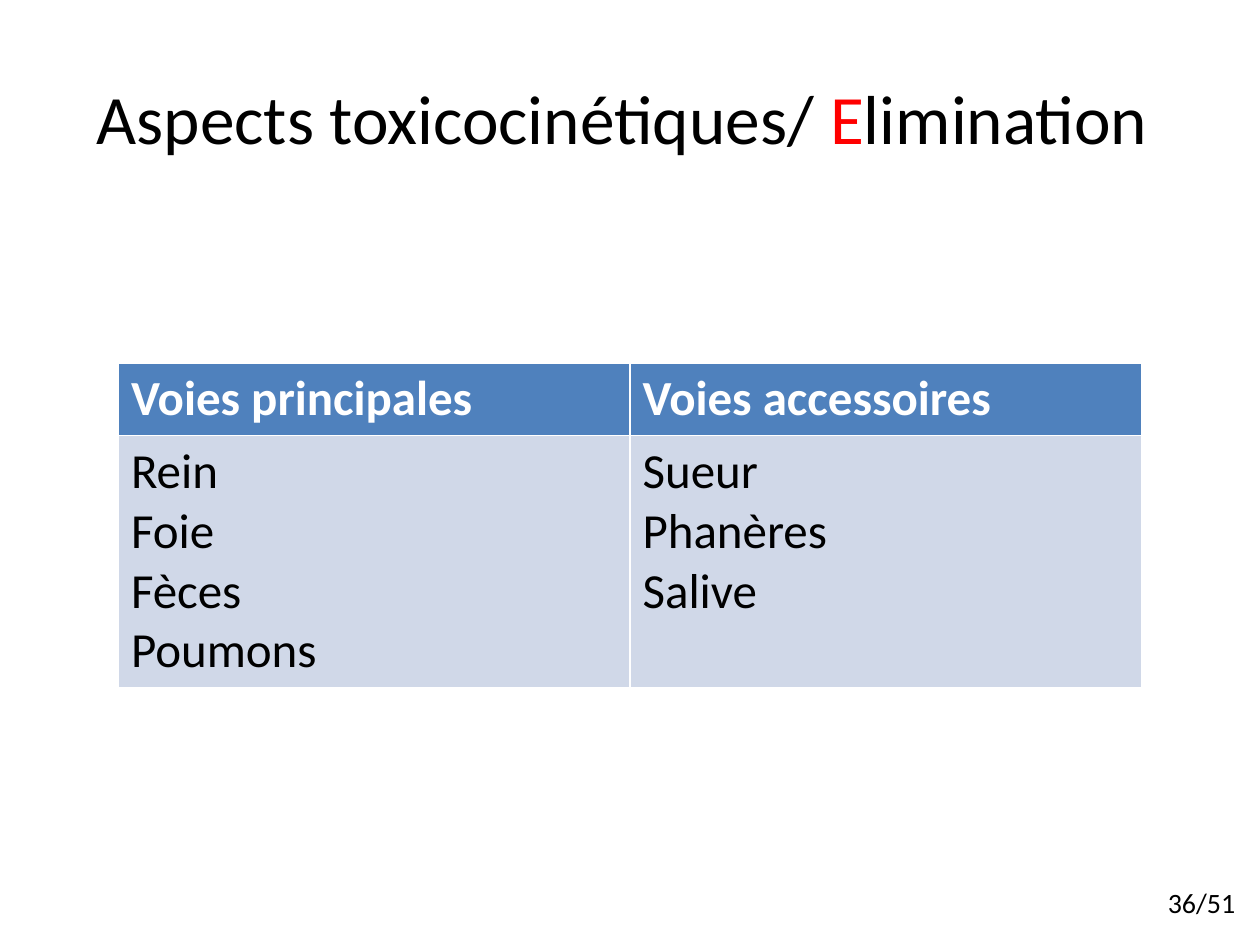
from pptx import Presentation
from pptx import util as u
from pptx.dml import color
from pptx.enum import text

COLORS = {"ink": "000000", "accent": "FF0000", "header": "4F81BD",
          "body": "D0D8E8", "paper": "FFFFFF"}
ROUTES = {
    "Voies principales": ["Rein", "Foie", "Fèces", "Poumons"],
    "Voies accessoires": ["Sueur", "Phanères", "Salive"],
}


class SlideWriter:
    """Holds the style and the current slide; lengths are shares of its size."""

    font = "Calibri"

    def __init__(self, deck):
        self.deck = deck
        self.page = deck.slides.add_slide(deck.slide_layouts[5])

    def area(self, left, top, width, height):
        wide, high = self.deck.slide_width, self.deck.slide_height
        return [u.Emu(round(share * size)) for share, size in
                zip((left, top, width, height), (wide, high, wide, high))]

    def style(self, span, size, ink="ink", bold=False):
        span.font.name = self.font
        span.font.size = u.Pt(size)
        span.font.bold = bold
        span.font.color.rgb = color.RGBColor.from_string(COLORS[ink])

    def title(self, parts, area, size):
        box = self.page.shapes.title
        box.left, box.top, box.width, box.height = self.area(*area)
        box.text_frame.vertical_anchor = text.MSO_ANCHOR.MIDDLE
        para = box.text_frame.paragraphs[0]
        para.alignment = text.PP_ALIGN.CENTER
        for words, ink in parts:
            span = para.add_run()
            span.text = words
            self.style(span, size, ink)

    def cell(self, cell, lines, size, fill, ink, bold):
        cell.fill.solid()
        cell.fill.fore_color.rgb = color.RGBColor.from_string(COLORS[fill])
        cell.text_frame.text = "\n".join(lines)
        for para in cell.text_frame.paragraphs:
            for span in para.runs:
                self.style(span, size, ink, bold)

    def table(self, columns, area, header_share, size):
        frame = self.page.shapes.add_table(2, len(columns), *self.area(*area))
        table = frame.table
        table.rows[0].height = round(frame.height * header_share)
        table.rows[1].height = frame.height - table.rows[0].height
        for index, (heading, lines) in enumerate(columns.items()):
            self.cell(table.cell(0, index), [heading], size, "header", "paper", True)
            self.cell(table.cell(1, index), lines, size, "body", "ink", False)

    def label(self, words, area, size):
        box = self.page.shapes.add_textbox(*self.area(*area))
        box.text_frame.word_wrap = True
        box.text_frame.text = words
        para = box.text_frame.paragraphs[0]
        para.alignment = text.PP_ALIGN.JUSTIFY
        self.style(para.runs[0], size)


def main():
    deck = Presentation()
    deck.slide_width, deck.slide_height = u.Inches(10), u.Inches(7.5)
    writer = SlideWriter(deck)
    writer.title([("Aspects toxicocinétiques/ ", "ink"), ("E", "accent"),
                  ("limination ", "ink")], (0.05, 0.04, 0.9, 1 / 6), 39.6)
    writer.table(ROUTES, (0.094, 0.384, 0.812, 0.34), 0.22, 28)
    writer.label("36/51", (0.917, 0.93, 0.079, 0.05), 16)
    deck.save("out.pptx")


if __name__ == "__main__":
    main()
